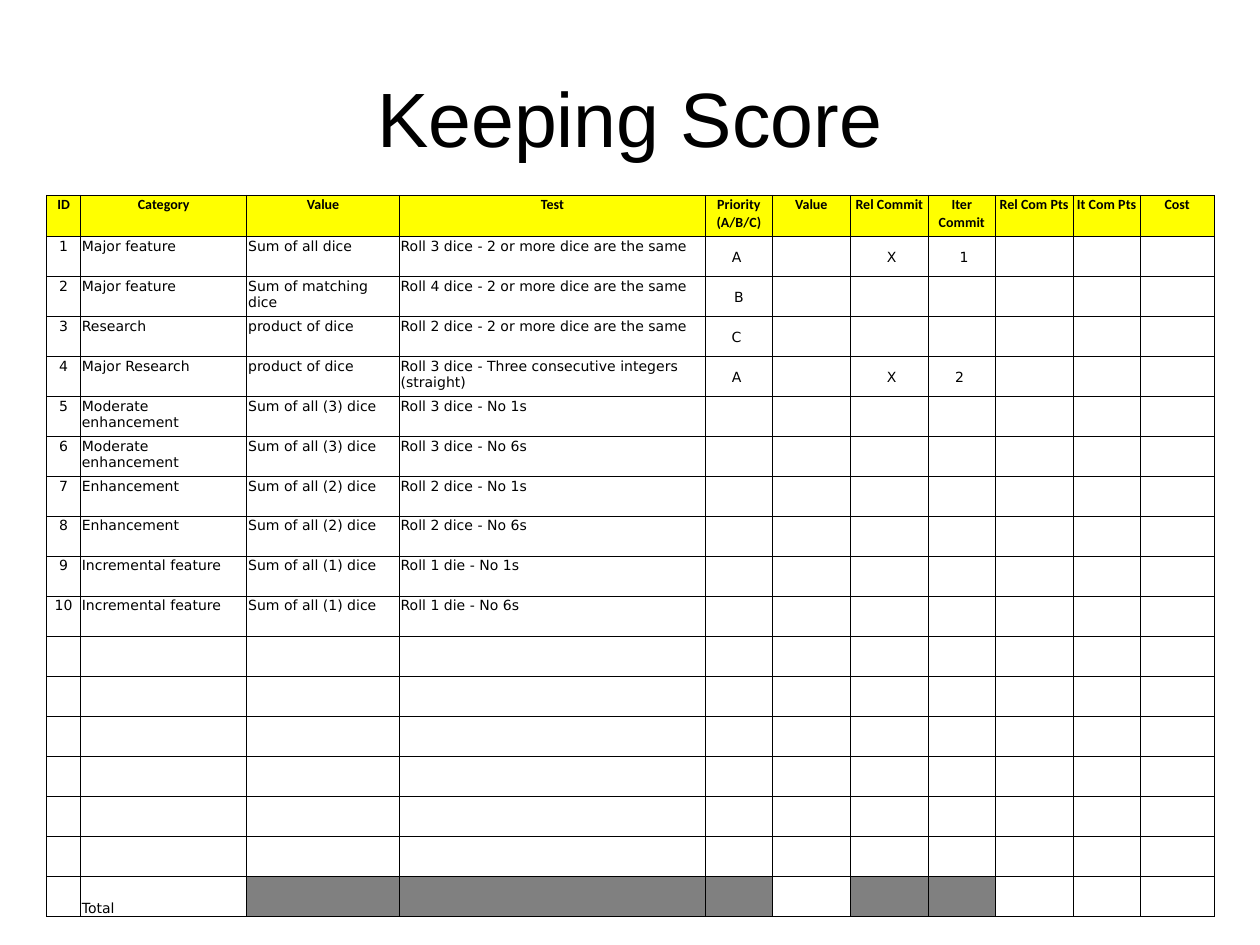
"""Build the Keeping Score slide with its backlog table."""
import dataclasses
import typing

import lxml.etree
import pptx
import pptx.dml.color
import pptx.enum.text
import pptx.oxml.ns
import pptx.util

Inches = pptx.util.Inches
Pt = pptx.util.Pt
Align = pptx.enum.text.PP_ALIGN
Anchor = pptx.enum.text.MSO_ANCHOR


@dataclasses.dataclass(frozen=True)
class Theme:
    ink: str = "000000"
    head: str = "FFFF00"
    shade: str = "808080"
    title_font: str = "Arial"
    head_font: str = "Calibri"
    body_font: str = "DejaVu Sans"
    title_size: float = 44
    cell_size: float = 8
    rule: float = 0.5


class Look(typing.NamedTuple):
    font: str
    bold: bool = False
    align: Align = Align.LEFT
    anchor: Anchor = Anchor.TOP
    fill: typing.Optional[str] = None


class Story(typing.NamedTuple):
    kind: str
    value: str
    test: str
    rank: str = ""
    rel: str = ""
    turn: str = ""


THEME = Theme()
HEADS = ("ID", "Category", "Value", "Test", "Priority (A/B/C)", "Value",
         "Rel Commit", "Iter Commit", "Rel Com Pts", "It Com Pts", "Cost")
WIDTHS = (0.27, 1.32, 1.21, 2.43, 0.53, 0.62, 0.62, 0.53, 0.62, 0.53, 0.59)
STORIES = (
    Story("Major feature", "Sum of all dice", "Roll 3 dice - 2 or more dice are the same", "A ", " X", " 1"),
    Story("Major feature", "Sum of matching dice", "Roll 4 dice - 2 or more dice are the same", "B"),
    Story("Research", "product of dice", "Roll 2 dice - 2 or more dice are the same", "C "),
    Story("Major Research", "product of dice", "Roll 3 dice - Three consecutive integers (straight)", "A ", " X", "2 "),
    Story("Moderate enhancement", "Sum of all (3) dice", "Roll 3 dice - No 1s"),
    Story("Moderate enhancement", "Sum of all (3) dice", "Roll 3 dice - No 6s"),
    Story("Enhancement", "Sum of all (2) dice", "Roll 2 dice - No 1s"),
    Story("Enhancement", "Sum of all (2) dice", "Roll 2 dice - No 6s"),
    Story("Incremental feature", "Sum of all (1) dice", "Roll 1 die - No 1s"),
    Story("Incremental feature", "Sum of all (1) dice", "Roll 1 die - No 6s"),
)
SPARE = 6
SHADED = (2, 3, 4, 6, 7)
HIGH = 5.73
HEAD_HIGH = 0.33


def style(para, font: str, size: float, bold: bool, align: Align) -> None:
    para.alignment = align
    para.font.name = font
    para.font.size = Pt(size)
    para.font.bold = bold
    para.font.color.rgb = pptx.dml.color.RGBColor.from_string(THEME.ink)


def border(cell) -> None:
    props = cell._tc.get_or_add_tcPr()
    qn = pptx.oxml.ns.qn
    for spot, side in enumerate(("lnL", "lnR", "lnT", "lnB")):
        line = lxml.etree.Element(qn(f"a:{side}"), w=str(Pt(THEME.rule)))
        fill = lxml.etree.SubElement(line, qn("a:solidFill"))
        lxml.etree.SubElement(fill, qn("a:srgbClr"), val=THEME.ink)
        props.insert(spot, line)


def draw_cell(cell, text: str, look: Look) -> None:
    cell.margin_left = cell.margin_right = cell.margin_top = Inches(0.01)
    cell.margin_bottom = 0
    cell.vertical_anchor = look.anchor
    cell.text = text
    style(cell.text_frame.paragraphs[0], look.font, THEME.cell_size, look.bold, look.align)
    if look.fill:
        cell.fill.solid()
        cell.fill.fore_color.rgb = pptx.dml.color.RGBColor.from_string(look.fill)
    else:
        cell.fill.background()
    border(cell)


def pick_look(row: int, col: int, last: int) -> Look:
    if row == 0:
        return Look(THEME.head_font, True, Align.CENTER, fill=THEME.head)
    if row == last:
        return Look(THEME.body_font, anchor=Anchor.BOTTOM,
                    fill=THEME.shade if col in SHADED else None)
    if col == 0:
        return Look(THEME.body_font, align=Align.CENTER)
    if col < 4:
        return Look(THEME.body_font)
    return Look(THEME.body_font, align=Align.CENTER, anchor=Anchor.MIDDLE)


def list_rows() -> list[tuple[str, ...]]:
    blank = ("",) * len(HEADS)
    rows = [HEADS]
    for num, story in enumerate(STORIES, 1):
        rows.append((str(num), story.kind, story.value, story.test, story.rank,
                     "", story.rel, story.turn, "", "", ""))
    return rows + [blank] * SPARE + [("", "Total") + blank[2:]]


def draw_title(slide) -> None:
    box = slide.shapes.add_textbox(Inches(0.5), Inches(0.3), Inches(9), Inches(1.25))
    frame = box.text_frame
    frame.word_wrap = True
    frame.vertical_anchor = Anchor.MIDDLE
    frame.text = "Keeping Score"
    style(frame.paragraphs[0], THEME.title_font, THEME.title_size, False, Align.CENTER)


def draw_table(slide) -> None:
    rows = list_rows()
    last = len(rows) - 1
    table = slide.shapes.add_table(len(rows), len(HEADS), Inches(0.37), Inches(1.55),
                                   Inches(sum(WIDTHS)), Inches(HIGH)).table
    table.first_row = table.horz_banding = False
    for col, width in zip(table.columns, WIDTHS):
        col.width = Inches(width)
    for row, texts in enumerate(rows):
        table.rows[row].height = Inches((HIGH - HEAD_HIGH) / last if row else HEAD_HIGH)
        for col, text in enumerate(texts):
            draw_cell(table.cell(row, col), text, pick_look(row, col, last))


def main() -> None:
    deck = pptx.Presentation()
    deck.slide_width, deck.slide_height = Inches(10), Inches(7.5)
    slide = deck.slides.add_slide(deck.slide_layouts[6])
    draw_title(slide)
    draw_table(slide)
    deck.save("out.pptx")


if __name__ == "__main__":
    main()
